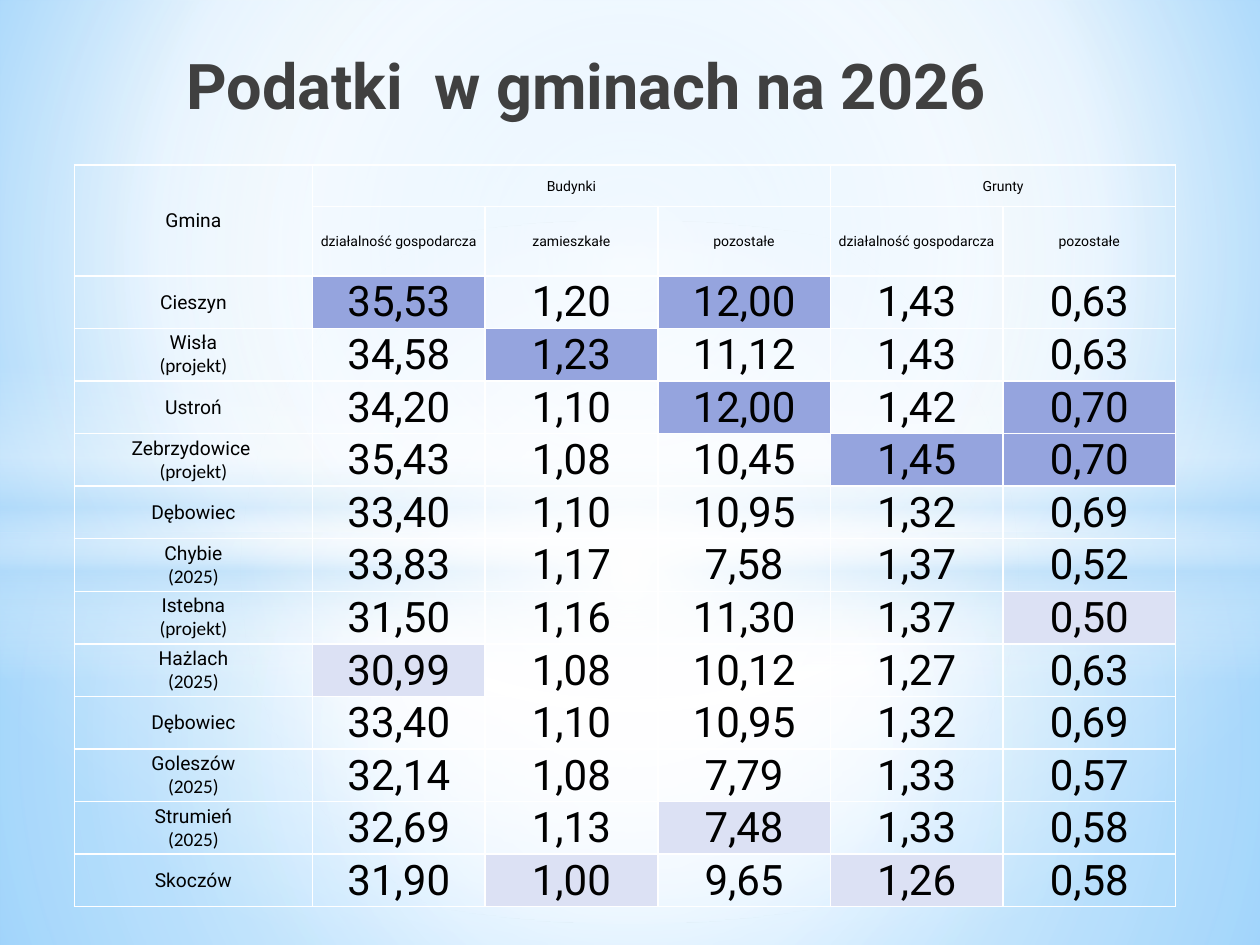
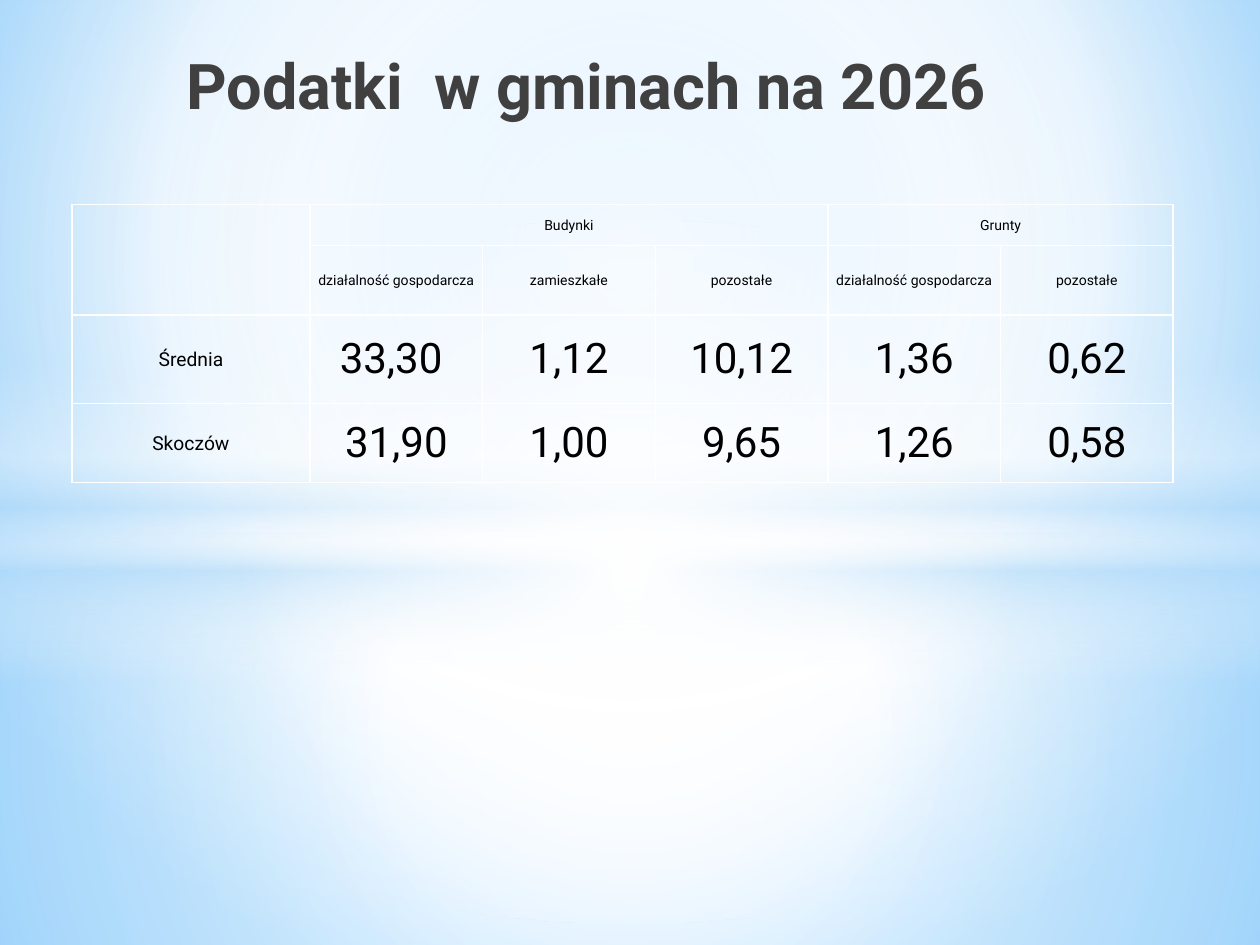
"""Build two slides comparing local tax rates between municipalities."""
from dataclasses import dataclass

from pptx import Presentation
from pptx.dml.color import RGBColor as RGB
from pptx.enum.shapes import MSO_SHAPE as SHAPE
from pptx.enum.text import MSO_ANCHOR as ANCHOR, MSO_AUTO_SIZE as AUTOSIZE, PP_ALIGN as ALIGN
from pptx.oxml import parse_xml
from pptx.oxml.ns import nsdecls, qn
from pptx.util import Cm, Pt


@dataclass(frozen=True)
class Theme:
    """Colours, fonts and type sizes."""
    font: str = "Roboto"
    note_font: str = "Calibri"
    title: str = "404040"
    text: str = "000000"
    border: str = "FFFFFF"
    highest: str = "95A4DE"
    lowest: str = "DCE1F4"
    white: str = "FFFFFF"
    mist: str = "B4DCFA"
    sky: str = "9ED5FF"
    deep_sky: str = "5BB9FF"
    title_size: int = 36
    head_size: int = 8
    name_size: int = 11
    value_size: int = 24


T = Theme()
WIDTH, HEIGHT = 25.4, 19.05
TITLE = "Podatki  w gminach na 2026"
COL_WIDTHS = [4.8] + [3.48] * 5
HEAD_HEIGHTS = [0.83, 1.4]
GROUPS = [("Budynki", 1, 3), ("Grunty", 4, 5)]
KINDS = ["działalność gospodarcza", "zamieszkałe", "pozostałe",
         "działalność gospodarcza", "pozostałe"]
RATES = [
    ("Cieszyn", "", ["35,53", "1,20", "12,00", "1,43", "0,63"]),
    ("Wisła", "(projekt)", ["34,58", "1,23", "11,12", "1,43", "0,63"]),
    ("Ustroń", "", ["34,20", "1,10", "12,00", "1,42", "0,70"]),
    ("Zebrzydowice ", "(projekt)", ["35,43", "1,08", "10,45", "1,45", "0,70"]),
    ("Dębowiec", "", ["33,40", "1,10", "10,95", "1,32", "0,69"]),
    ("Chybie", "(2025)", ["33,83", "1,17", "7,58", "1,37", "0,52"]),
    ("Istebna", "(projekt)", ["31,50", "1,16", "11,30", "1,37", "0,50"]),
    ("Hażlach", "(2025)", ["30,99", "1,08", "10,12", "1,27", "0,63"]),
    ("Dębowiec", "", ["33,40", "1,10", "10,95", "1,32", "0,69"]),
    ("Goleszów", "(2025)", ["32,14", "1,08", "7,79", "1,33", "0,57"]),
    ("Strumień", "(2025)", ["32,69", "1,13", "7,48", "1,33", "0,58"]),
    ("Skoczów", "", ["31,90", "1,00", "9,65", "1,26", "0,58"]),
]
AVERAGES = [
    ("Średnia", "", ["33,30 ", "1,12", "10,12", "1,36", "0,62"]),
    RATES[-1],
]
CENTRE = (50, 50, 50, 50)
BACKGROUND = [(0, T.sky, 100), (60, T.white, 100), (100, T.deep_sky, 100)]
BANDS = [
    (SHAPE.RECTANGLE, 10.74, 8.31, CENTRE,
     [(0, T.white, 91), (37, T.white, 76), (100, T.mist, 79)]),
    (SHAPE.RECTANGLE, 0, 10.74, CENTRE,
     [(0, T.white, 89), (48, T.white, 62), (100, T.mist, 79)]),
    (SHAPE.RECTANGLE, 7.37, 6.35, None,
     [(0, T.white, 0), (29, T.white, 30), (45, T.mist, 40),
      (55, T.white, 26), (65, T.mist, 60), (100, T.white, 0)]),
    (SHAPE.OVAL, 4.45, 14.17, CENTRE, [(0, T.white, 100), (54, T.white, 0)]),
]


def set_gradient(parent, stops, focus):
    """Replace an empty fill by a circular gradient, or a vertical one without focus."""
    gs = "".join(
        f'<a:gs pos="{pos * 1000}"><a:srgbClr val="{color}">'
        f'<a:alpha val="{alpha * 1000}"/></a:srgbClr></a:gs>'
        for pos, color, alpha in stops)
    if focus:
        sides = " ".join(f'{side}="{v * 1000}"' for side, v in zip("ltrb", focus))
        course = f'<a:path path="circle"><a:fillToRect {sides}/></a:path>'
    else:
        course = '<a:lin ang="5400000" scaled="0"/>'
    grad = parse_xml(f'<a:gradFill {nsdecls("a")} rotWithShape="1">'
                     f'<a:gsLst>{gs}</a:gsLst>{course}</a:gradFill>')
    parent.replace(parent.find(qn("a:noFill")), grad)


def number(text):
    """Read a value written with a decimal comma."""
    return float(text.replace(",", "."))


class Deck:
    """Hold the presentation, its theme and the current slide."""

    def __init__(self, theme):
        self.theme = theme
        self.prs = Presentation()
        self.prs.slide_width, self.prs.slide_height = Cm(WIDTH), Cm(HEIGHT)
        self.s = None

    def slide(self):
        """Start a slide with the title-only layout."""
        self.s = self.prs.slides.add_slide(self.prs.slide_layouts[5])

    def backdrop(self):
        """Give the master its background and light bands."""
        master = self.prs.slide_master
        master.background.fill.background()
        set_gradient(master.element.find(".//" + qn("p:bgPr")), BACKGROUND, (20, 10, 20, 60))
        for i, (kind, top, height, focus, stops) in enumerate(BANDS):
            sp = self.s.shapes.add_shape(kind, 0, Cm(top), Cm(WIDTH), Cm(height))
            sp.shadow.inherit = False
            sp.line.fill.background()
            sp.fill.background()
            set_gradient(sp.element.spPr, stops, focus)
            sp.element.nvSpPr.cNvPr.set("id", str(20 + i))
            master.shapes.element.insert(2 + i, sp.element)

    def run(self, p, text, size, color, font=None, bold=False):
        """Add a formatted run."""
        r = p.add_run()
        r.text = text
        r.font.name = font or self.theme.font
        r.font.size = Pt(size)
        r.font.bold = bold
        r.font.color.rgb = RGB.from_string(color)

    def title(self, text):
        """Place and fill the title placeholder."""
        sp = self.s.shapes.title
        sp.left, sp.top, sp.width, sp.height = Cm(3.5), Cm(0.82), Cm(18.08), Cm(2.72)
        tf = sp.text_frame
        tf.word_wrap = True
        tf.auto_size = AUTOSIZE.NONE
        tf.vertical_anchor = ANCHOR.TOP
        p = tf.paragraphs[0]
        p.alignment = ALIGN.LEFT
        self.run(p, text, self.theme.title_size, self.theme.title, bold=True)

    def frame_cell(self, cell):
        """Set borders, insets and an empty fill."""
        cell.vertical_anchor = ANCHOR.MIDDLE
        cell.margin_left = cell.margin_right = cell.margin_top = Cm(0.02)
        cell.margin_bottom = 0
        tc_pr = cell._tc.get_or_add_tcPr()
        for side in "LRTB":
            tc_pr.append(parse_xml(
                f'<a:ln{side} {nsdecls("a")} w="12700"><a:solidFill>'
                f'<a:srgbClr val="{self.theme.border}"/></a:solidFill></a:ln{side}>'))
        cell.fill.background()

    def write_cell(self, cell, text, size, note="", fill=None):
        """Write a centred cell with an optional second line."""
        tf = cell.text_frame
        p = tf.paragraphs[0]
        p.alignment = ALIGN.CENTER
        if text:
            self.run(p, text, size, self.theme.text)
        if note:
            p = tf.add_paragraph()
            p.alignment = ALIGN.CENTER
            self.run(p, note, size, self.theme.text, self.theme.note_font)
        if fill:
            cell.fill.solid()
            cell.fill.fore_color.rgb = RGB.from_string(fill)

    def tax_table(self, left, top, corner, rows, heights, highlight=False):
        """Draw the two-level header and one row per municipality."""
        t = self.theme
        heights = HEAD_HEIGHTS + heights
        table = self.s.shapes.add_table(
            len(heights), len(COL_WIDTHS), Cm(left), Cm(top),
            Cm(sum(COL_WIDTHS)), Cm(sum(heights))).table
        table.first_row = table.horz_banding = False
        for col, width in zip(table.columns, COL_WIDTHS):
            col.width = Cm(width)
        for row, height in zip(table.rows, heights):
            row.height = Cm(height)
        for cell in table.iter_cells():
            self.frame_cell(cell)

        table.cell(0, 0).merge(table.cell(1, 0))
        self.write_cell(table.cell(0, 0), corner, t.name_size)
        for name, first, last in GROUPS:
            table.cell(0, first).merge(table.cell(0, last))
            self.write_cell(table.cell(0, first), name, t.head_size)
        for c, kind in enumerate(KINDS, 1):
            self.write_cell(table.cell(1, c), kind, t.head_size)

        columns = [[number(v) for v in col] for col in zip(*(row[2] for row in rows))]
        for r, (name, note, values) in enumerate(rows, 2):
            self.write_cell(table.cell(r, 0), name, t.name_size, note)
            for c, value in enumerate(values, 1):
                column = columns[c - 1]
                marks = {min(column): t.lowest, max(column): t.highest} if highlight else {}
                self.write_cell(table.cell(r, c), value, t.value_size,
                                fill=marks.get(number(value)))


def main():
    """Build and save the slides."""
    deck = Deck(T)
    deck.slide()
    deck.backdrop()
    deck.title(TITLE)
    deck.tax_table(1.5, 3.33, "Gmina", RATES, [1.06] * len(RATES), highlight=True)

    deck.slide()
    deck.title(TITLE)
    deck.tax_table(1.45, 4.12, "", AVERAGES, [1.78, 1.6])
    deck.prs.save("out.pptx")


if __name__ == "__main__":
    main()
